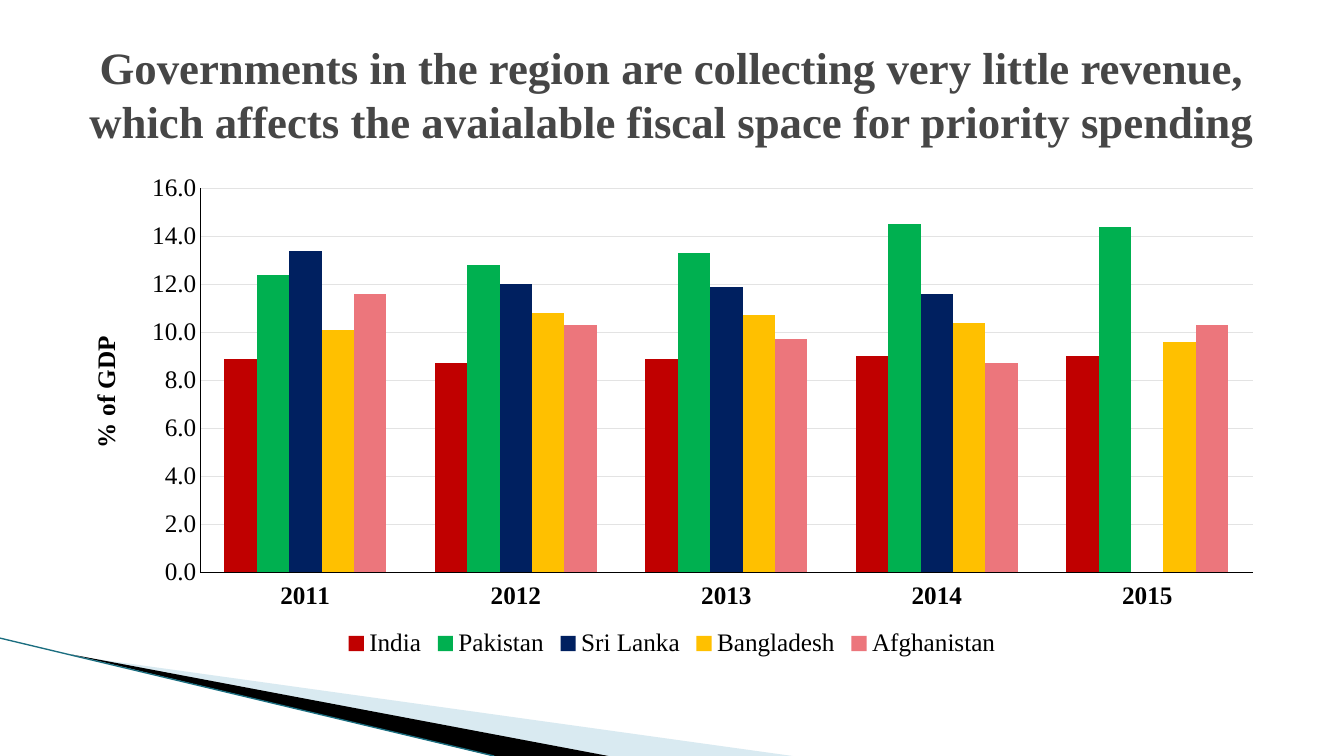
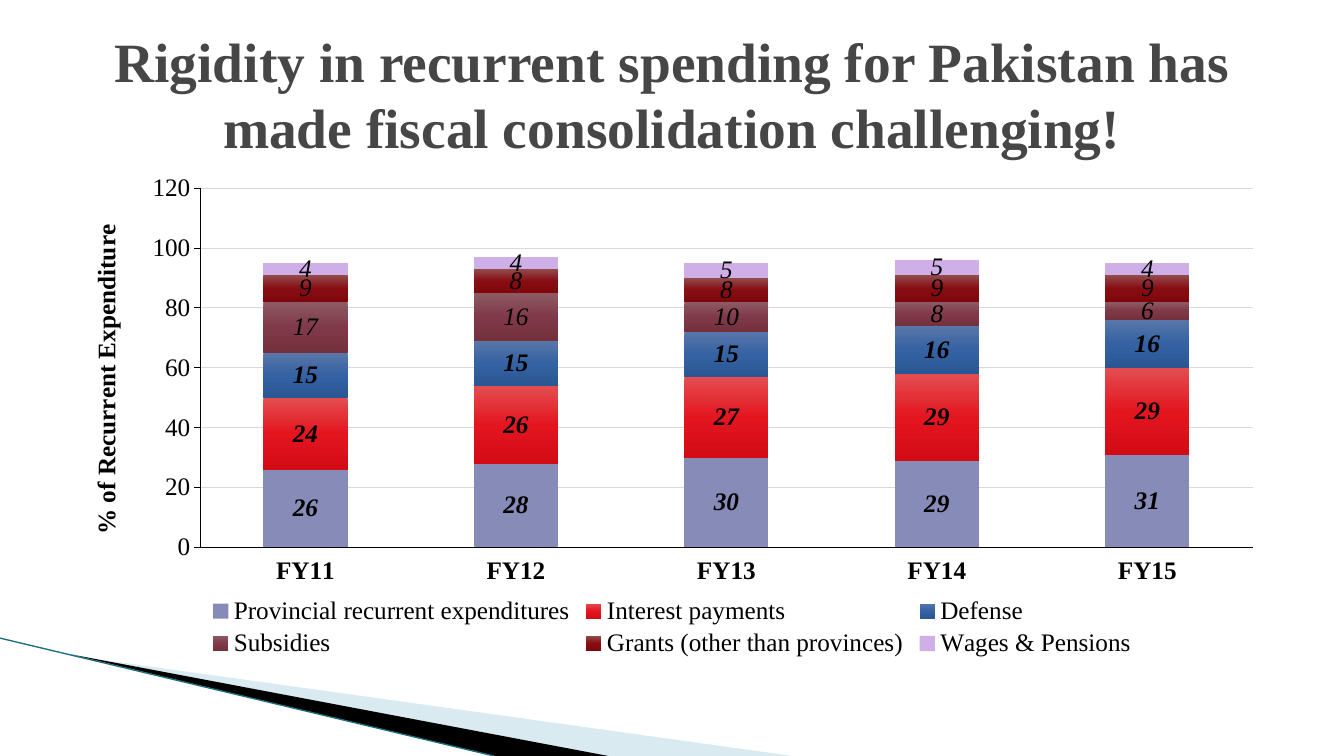
import copy

import pptx
import pptx.chart.data
import pptx.dml.color
import pptx.enum.chart
import pptx.enum.shapes
import pptx.enum.text
import pptx.oxml
import pptx.oxml.ns
import pptx.util

Pt = pptx.util.Pt
FACE = "Times New Roman"
COLORS = {
    "title": "464646",
    "black": "000000",
    "pale": "A0CBDC",
    "teal": "1B6E80",
    "light": "E3E3E3",
    "gray": "D9D9D9",
    "india": "C00000",
    "pakistan": "00B050",
    "lanka": "002060",
    "bangla": "FFC000",
    "afghan": "EC767C",
    "lilac": "878BB8",
    "violet": "CFAFE7",
}
BLENDS = {
    "red": ("E34E51", "E31620", "D20B15"),
    "blue": ("5976A9", "3462A2", "2A5794"),
    "plum": ("8D5B64", "803948", "75303E"),
    "wine": ("924C4D", "880D13", "7E070C"),
}


def rgb(name):
    return pptx.dml.color.RGBColor.from_string(COLORS[name])


def style(font, size=18, color="black", bold=False, slant=False):
    font.name = FACE
    font.size = Pt(size)
    font.bold = bold
    font.italic = slant
    font.color.rgb = rgb(color)


def stroke(line, color, width=0.75):
    line.color.rgb = rgb(color)
    line.width = Pt(width)


def add_band(shapes, points, color, alpha=100):
    start, *rest = [(Pt(x), Pt(y)) for x, y in points]
    path = shapes.build_freeform(*start)
    path.add_line_segments(rest, close=True)
    band = path.convert_to_shape()
    band.shadow.inherit = False
    band.fill.solid()
    band.fill.fore_color.rgb = rgb(color)
    band.line.fill.background()
    if alpha < 100:
        tint = band.element.xpath("./p:spPr/a:solidFill/a:srgbClr")[0]
        node = pptx.oxml.parse_xml(
            f'<a:alpha {pptx.oxml.ns.nsdecls("a")} val="{alpha * 1000}"/>')
        tint.append(node)
    return band


def add_edge(shapes, start, end):
    kind = pptx.enum.shapes.MSO_CONNECTOR.STRAIGHT
    edge = shapes.add_connector(kind, *map(Pt, start + end))
    stroke(edge.line, "teal", 0.95)
    node = pptx.oxml.parse_xml(f'<a:effectLst {pptx.oxml.ns.nsdecls("a")}/>')
    edge.element.spPr.append(node)
    return edge


def set_layout(deck, layout):
    title = layout.placeholders[0]
    title.left, title.top = Pt(48), Pt(21.6)
    title.width, title.height = Pt(864), Pt(90)
    draft = deck.slides.add_slide(layout)
    marks = [
        add_band(draft.shapes, [(52.5, 468.5), (566, 540), (434, 540)], "pale", 40),
        add_band(draft.shapes, [(51, 467.5), (434.5, 540), (352, 540)], "black"),
        add_edge(draft.shapes, (0, 455.8), (353, 540)),
    ]
    for index, mark in enumerate(marks, 100):
        mark.element.xpath(".//p:cNvPr")[0].set("id", str(index))
        layout.shapes.element.append(mark.element)
    return draft


def set_title(slide, text, size):
    frame = slide.shapes.title.text_frame
    frame.text = text
    frame.word_wrap = True
    frame.auto_size = pptx.enum.text.MSO_AUTO_SIZE.NONE
    frame.vertical_anchor = pptx.enum.text.MSO_ANCHOR.MIDDLE
    para = frame.paragraphs[0]
    para.alignment = pptx.enum.text.PP_ALIGN.CENTER
    style(para.font, size, "title", True)


def paint(series, color):
    fill = series.format.fill
    if color in COLORS:
        fill.solid()
        fill.fore_color.rgb = rgb(color)
        return
    fill.gradient()
    fill.gradient_angle = 270
    stops = series._element.xpath("./c:spPr/a:gradFill/a:gsLst")[0]
    stops.append(copy.deepcopy(stops[0]))
    for stop, place, tone in zip(fill.gradient_stops, (0, 0.5, 1), BLENDS[color]):
        stop.position = place
        stop.color.rgb = pptx.dml.color.RGBColor.from_string(tone)


def add_labels(series, bold):
    labels = series.data_labels
    labels.show_value = True
    labels.number_format = "#,##0"
    labels.number_format_is_linked = False
    labels.position = pptx.enum.chart.XL_LABEL_POSITION.CENTER
    style(labels.font, bold=bold, slant=True)


def place_plot(chart, x, y, w, h):
    spots = "".join(f'<c:{key} val="{val}"/>' for key, val in
                    zip("xywh", (x, y, w, h)))
    node = pptx.oxml.parse_xml(
        f'<c:layout {pptx.oxml.ns.nsdecls("c")}><c:manualLayout>'
        '<c:layoutTarget val="inner"/><c:xMode val="edge"/>'
        f'<c:yMode val="edge"/>{spots}</c:manualLayout></c:layout>')
    area = chart.element.xpath(".//c:plotArea")[0]
    for old in area.xpath("./c:layout"):
        area.remove(old)
    area.insert(0, node)


def set_axes(chart, label, form, top, step, grid, ticks):
    none = pptx.enum.chart.XL_TICK_MARK.NONE
    base, side = chart.category_axis, chart.value_axis
    base.major_tick_mark = base.minor_tick_mark = none
    base.tick_label_position = pptx.enum.chart.XL_TICK_LABEL_POSITION.LOW
    style(base.tick_labels.font, bold=True)
    stroke(base.format.line, "black")
    side.minimum_scale, side.maximum_scale = 0, top
    side.major_unit = step
    side.major_tick_mark, side.minor_tick_mark = ticks, none
    side.tick_labels.number_format = form
    side.tick_labels.number_format_is_linked = False
    style(side.tick_labels.font)
    stroke(side.format.line, "black")
    side.has_major_gridlines = True
    stroke(side.major_gridlines.format.line, grid)
    frame = side.axis_title.text_frame
    frame.text = label
    style(frame.paragraphs[0].font, bold=True)


def add_chart(slide, kind, cats, rows, height):
    data = pptx.chart.data.CategoryChartData()
    data.categories = cats
    for name, color, vals in rows:
        data.add_series(name, vals)
    spot = map(Pt, (48, 116.64, 864, 356.4))
    chart = slide.shapes.add_chart(kind, *spot, data).chart
    chart.has_title = False
    style(chart.font)
    chart.has_legend = True
    chart.legend.position = pptx.enum.chart.XL_LEGEND_POSITION.BOTTOM
    chart.legend.include_in_layout = False
    style(chart.legend.font)
    plot = chart.plots[0]
    plot.vary_by_categories = False
    plot.gap_width = 150
    for series, row in zip(plot.series, rows):
        paint(series, row[1])
    place_plot(chart, 0.11, 0.05, 0.87, height)
    return chart


def show_taxes(slide):
    set_title(slide, "Governments in the region are collecting very little revenue, "
              "which affects the avaialable fiscal space for priority spending", 32)
    rows = [
        ("India", "india", (8.9, 8.7, 8.9, 9, 9)),
        ("Pakistan", "pakistan", (12.4, 12.8, 13.3, 14.5, 14.4)),
        ("Sri Lanka", "lanka", (13.4, 12, 11.9, 11.6, None)),
        ("Bangladesh", "bangla", (10.1, 10.8, 10.7, 10.4, 9.6)),
        ("Afghanistan", "afghan", (11.6, 10.3, 9.7, 8.7, 10.3)),
    ]
    cats = [str(year) for year in range(2011, 2016)]
    kind = pptx.enum.chart.XL_CHART_TYPE.COLUMN_CLUSTERED
    chart = add_chart(slide, kind, cats, rows, 0.77)
    chart.plots[0].overlap = 0
    set_axes(chart, "% of GDP", "#,##0.0", 16, 2, "light",
             pptx.enum.chart.XL_TICK_MARK.NONE)


def show_costs(slide):
    set_title(slide, "Rigidity in recurrent spending for Pakistan has "
              "made fiscal consolidation challenging!", 39.6)
    rows = [
        ("Provincial recurrent expenditures", "lilac", (26, 28, 30, 29, 31)),
        ("Interest payments", "red", (24, 26, 27, 29, 29)),
        ("Defense", "blue", (15, 15, 15, 16, 16)),
        ("Subsidies", "plum", (17, 16, 10, 8, 6)),
        ("Grants (other than provinces)", "wine", (9, 8, 8, 9, 9)),
        ("Wages & Pensions", "violet", (4, 4, 5, 5, 4)),
    ]
    cats = [f"FY{year}" for year in range(11, 16)]
    kind = pptx.enum.chart.XL_CHART_TYPE.COLUMN_STACKED
    chart = add_chart(slide, kind, cats, rows, 0.72)
    chart.plots[0].overlap = 100
    set_axes(chart, "% of Recurrent Expenditure", "#,##0", 120, 20, "gray",
             pptx.enum.chart.XL_TICK_MARK.OUTSIDE)
    for index, series in enumerate(chart.plots[0].series):
        add_labels(series, index < 3)


def main():
    deck = pptx.Presentation()
    deck.slide_width, deck.slide_height = Pt(960), Pt(540)
    layout = deck.slide_layouts[5]
    show_taxes(set_layout(deck, layout))
    show_costs(deck.slides.add_slide(layout))
    deck.save("out.pptx")


if __name__ == "__main__":
    main()
